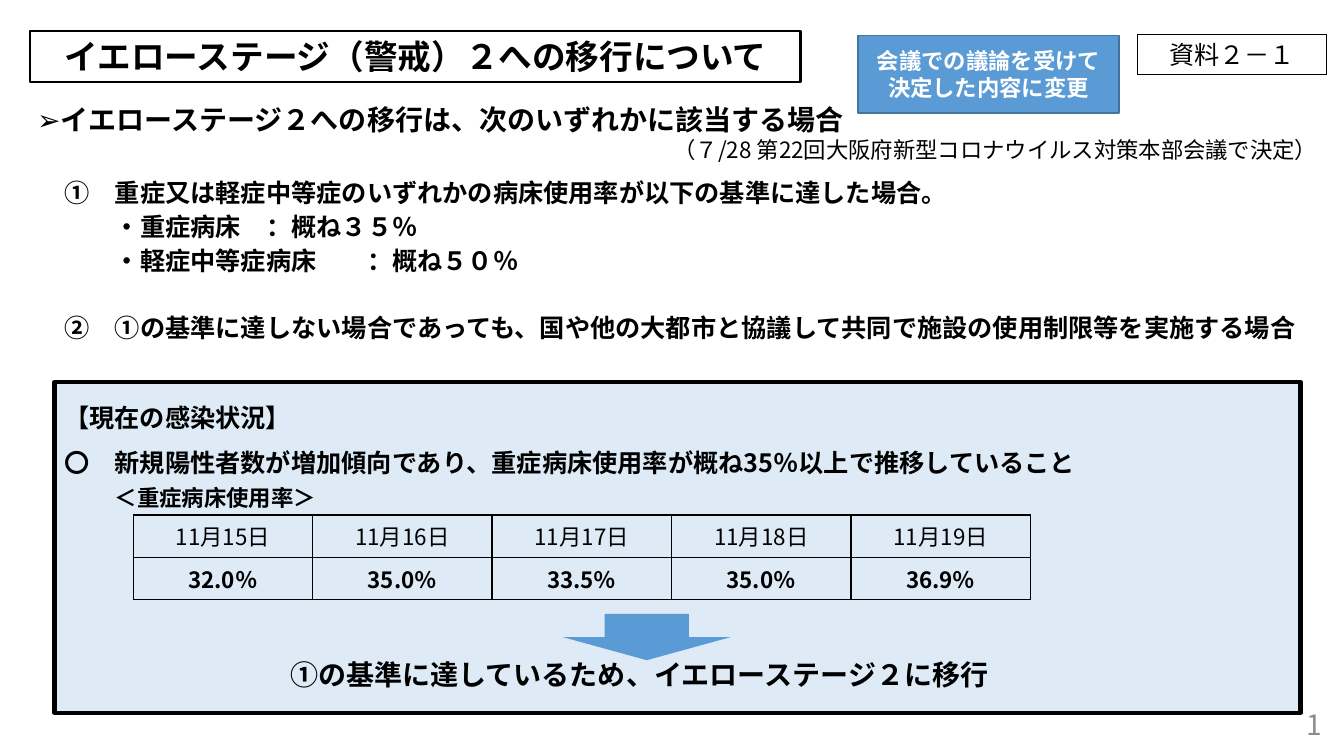
from dataclasses import dataclass
from typing import Any, Optional

from lxml import etree
from pptx import Presentation, util as u
from pptx.dml.color import RGBColor
from pptx.enum import shapes, text
from pptx.oxml import ns

PX = 9144
FONT = "Noto Sans CJK JP"
BLACK, WHITE, GREY = "000000", "FFFFFF", "8C8C8C"
BLUE, NAVY, PALE = "5B9BD5", "43739E", "DEEBF7"
LEFT, CENTER, RIGHT = text.PP_ALIGN.LEFT, text.PP_ALIGN.CENTER, text.PP_ALIGN.RIGHT
TOP, MIDDLE = text.MSO_ANCHOR.TOP, text.MSO_ANCHOR.MIDDLE
USAGE = {"11月15日": "32.0％", "11月16日": "35.0％", "11月17日": "33.5％",
         "11月18日": "35.0％", "11月19日": "36.9％"}


@dataclass
class Para:
    words: str
    size: int = 18
    bold: bool = True
    color: str = BLACK
    align: Any = LEFT
    spacing: Any = 1.0
    before: int = 0
    tabs: tuple[int, ...] = ()


@dataclass
class Box:
    at: tuple[int, int, int, int]
    paras: list[Para]
    fill: Optional[str] = None
    line: Optional[str] = None
    width: float = 1
    anchor: Any = MIDDLE
    geometry: Any = None
    holder: Any = None


def rgb(color: str) -> RGBColor:
    return RGBColor.from_string(color)


def child(parent: Any, tag: str, **attrs: str) -> Any:
    return etree.SubElement(parent, ns.qn(tag), **attrs)


def write(p: Any, para: Para) -> None:
    p.alignment, p.line_spacing = para.align, para.spacing
    p.space_before, p.space_after = u.Pt(para.before), u.Pt(0)
    pPr = p._p.get_or_add_pPr()
    pPr.set("marL", "0")
    pPr.set("indent", "0")
    child(pPr, "a:buNone")
    if para.tabs:
        stops = child(pPr, "a:tabLst")
        for pos in para.tabs:
            child(stops, "a:tab", pos=str(pos * PX), algn="l")
    r = p.add_run()
    r.text = para.words
    r.font.size, r.font.bold, r.font.name = u.Pt(para.size), para.bold, FONT
    r.font.color.rgb = rgb(para.color)
    child(r._r.get_or_add_rPr(), "a:ea", typeface=FONT)


def draw(s: Any, box: Box) -> None:
    at = [v * PX for v in box.at]
    if box.holder is not None:
        sp = box.holder
        sp.left, sp.top, sp.width, sp.height = at
    elif box.geometry is not None:
        sp = s.shapes.add_shape(box.geometry, *at)
        sp.shadow.inherit = False
    else:
        sp = s.shapes.add_textbox(*at)
    if box.fill:
        sp.fill.solid()
        sp.fill.fore_color.rgb = rgb(box.fill)
    else:
        sp.fill.background()
    if box.line:
        sp.line.color.rgb = rgb(box.line)
        sp.line.width = u.Pt(box.width)
    else:
        sp.line.fill.background()
    tf = sp.text_frame
    tf.word_wrap, tf.auto_size = True, text.MSO_AUTO_SIZE.NONE
    tf.vertical_anchor = box.anchor
    for i, para in enumerate(box.paras):
        write(tf.add_paragraph() if i else tf.paragraphs[0], para)


def draw_usage(s: Any) -> None:
    frame = s.shapes.add_table(2, len(USAGE), 132 * PX, 511 * PX, 890 * PX, 82 * PX)
    table = frame.table
    table.first_row = table.horz_banding = False
    for col, pair in enumerate(USAGE.items()):
        for row, words in enumerate(pair):
            cell = table.cell(row, col)
            tcPr = cell._tc.get_or_add_tcPr()
            for side in ("a:lnL", "a:lnR", "a:lnT", "a:lnB"):
                fill = child(child(tcPr, side, w=str(u.Pt(1))), "a:solidFill")
                child(fill, "a:srgbClr", val=BLACK)
            cell.fill.background()
            write(cell.text_frame.paragraphs[0], Para(words, 16, row == 1, align=CENTER))


def main() -> None:
    """Build the slide on the move to Yellow Stage 2."""
    prs = Presentation()
    prs.slide_width, prs.slide_height = 1333 * PX, 750 * PX
    s = prs.slides.add_slide(prs.slide_layouts[1])
    rect, arrow = shapes.MSO_SHAPE.RECTANGLE, shapes.MSO_SHAPE.DOWN_ARROW
    exact, tabs = u.Pt(24), (56, 281)
    boxes = [
        Box((30, 31, 764, 50), [Para("イエローステージ（警戒）２への移行について", 24, align=CENTER)],
            line=BLACK, width=1.5, holder=s.shapes.title),
        Box((27, 97, 1290, 71), [
            Para("➢イエローステージ２への移行は、次のいずれかに該当する場合", 20),
            Para("（７/28 第22回大阪府新型コロナウイルス対策本部会議で決定）", 16, False, align=RIGHT),
        ], anchor=TOP),
        Box((54, 168, 1270, 177), [
            Para("①　重症又は軽症中等症のいずれかの病床使用率が以下の基準に達した場合。", spacing=exact),
            Para("\t・重症病床\t：概ね３５％", spacing=exact, tabs=tabs),
            Para("\t・軽症中等症病床\t：概ね５０％", spacing=exact, tabs=tabs),
            Para("②　①の基準に達しない場合であっても、国や他の大都市と協議して共同で施設の使用制限等を実施する場合",
                 spacing=exact, before=24),
        ], anchor=TOP, holder=s.placeholders[1]),
        Box((54, 379, 1236, 328), [
            Para("【現在の感染状況】", spacing=1.5),
            Para("〇　新規陽性者数が増加傾向であり、重症病床使用率が概ね35％以上で推移していること", spacing=1.5),
        ], PALE, BLACK, 3, TOP, rect),
        Box((558, 609, 167, 46), [], BLUE, geometry=arrow),
        Box((278, 647, 929, 44), [Para("①の基準に達しているため、イエローステージ２に移行", 20)]),
        Box((104, 468, 1113, 44), [Para("＜重症病床使用率＞", 16, spacing=exact)]),
        Box((851, 35, 259, 77), [Para("会議での議論を受けて決定した内容に変更", 16, color=WHITE, align=CENTER)],
            BLUE, NAVY, geometry=rect),
        Box((1128, 34, 188, 40), [Para("資料２－１", bold=False, align=CENTER)],
            line=BLACK, width=0.75, geometry=rect),
        Box((1021, 699, 300, 40), [Para("1", 20, False, GREY, RIGHT)]),
    ]
    for box in boxes:
        draw(s, box)
    draw_usage(s)
    prs.save("out.pptx")


if __name__ == "__main__":
    main()
